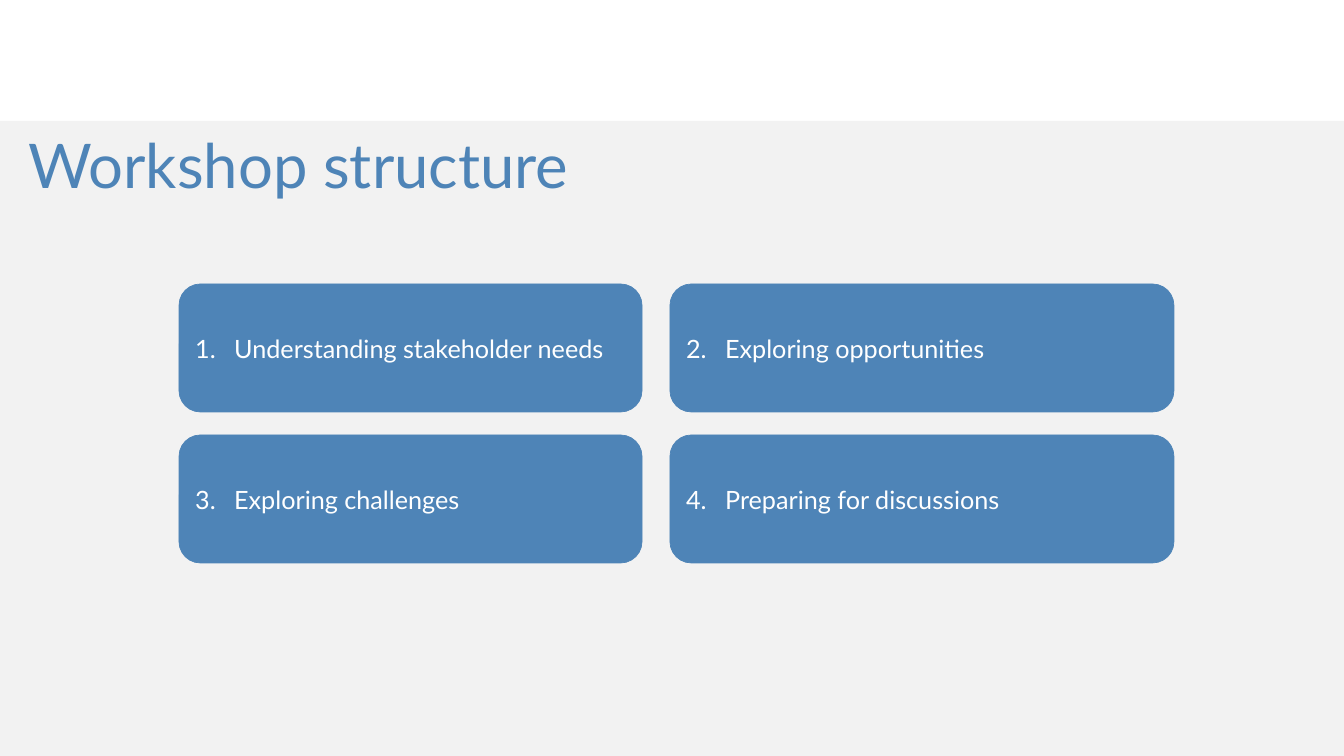
from lxml.etree import SubElement
from pptx import Presentation
from pptx.dml.color import RGBColor
from pptx.enum.shapes import MSO_SHAPE
from pptx.enum.text import MSO_ANCHOR, MSO_AUTO_SIZE, PP_ALIGN
from pptx.oxml.ns import qn
from pptx.util import Emu, Pt

BLUE = RGBColor(0x4E, 0x84, 0xB7)
GREY = RGBColor(0xF2, 0xF2, 0xF2)
WHITE = RGBColor(0xFF, 0xFF, 0xFF)

SLIDE_WIDTH, SLIDE_HEIGHT = 1344, 756
EMU_PER_PX = 12192000 / SLIDE_WIDTH

PANEL_TOP = 121
CARD_COLUMNS = [(179, 463), (670, 504)]  # left, width
CARD_TOP, CARD_HEIGHT, CARD_PITCH = 284, 128, 151
NUMBER_INDENT = 39

TITLE_FONT = {"name": "Lato", "size": Pt(44), "bold": False}
CARD_FONT = {"name": "Lato", "size": Pt(18), "bold": False}
STEPS = [
    "Understanding stakeholder needs",
    "Exploring opportunities",
    "Exploring challenges",
    "Preparing for discussions",
]


def px(length):
    return Emu(round(length * EMU_PER_PX))


def set_attributes(target, values):
    for name, value in values.items():
        setattr(target, name, value)


def format_font(paragraph, values, color):
    set_attributes(paragraph.font, values)
    paragraph.font.color.rgb = color


def number_paragraph(paragraph, number):
    """Give the paragraph an automatic number with a hanging indent."""
    properties = paragraph._p.get_or_add_pPr()
    properties.set("marL", str(px(NUMBER_INDENT)))
    properties.set("indent", str(-px(NUMBER_INDENT)))
    SubElement(properties, qn("a:buFont"), typeface="+mj-lt")
    SubElement(properties, qn("a:buAutoNum"), type="arabicPeriod", startAt=str(number))


def add_filled_shape(slide, kind, left, top, width, height, color):
    shape = slide.shapes.add_shape(kind, px(left), px(top), px(width), px(height))
    shape.shadow.inherit = False
    shape.fill.solid()
    shape.fill.fore_color.rgb = color
    return shape


def add_panel(slide):
    """Add the grey content area behind everything else."""
    panel = add_filled_shape(slide, MSO_SHAPE.RECTANGLE, 0, PANEL_TOP,
                             SLIDE_WIDTH, SLIDE_HEIGHT - PANEL_TOP, GREY)
    panel.line.fill.background()
    slide.shapes._spTree.insert(2, panel._element)


def set_title(slide, text):
    title = slide.shapes.title
    set_attributes(title, {"left": px(18), "top": px(122),
                           "width": px(1326), "height": px(85)})
    frame = title.text_frame
    frame.text = text
    set_attributes(frame, {"word_wrap": True, "auto_size": MSO_AUTO_SIZE.NONE,
                           "vertical_anchor": MSO_ANCHOR.TOP})
    paragraph = frame.paragraphs[0]
    paragraph.alignment = PP_ALIGN.LEFT
    format_font(paragraph, TITLE_FONT, BLUE)


def add_step_card(slide, index, text):
    row, column = divmod(index, len(CARD_COLUMNS))
    left, width = CARD_COLUMNS[column]
    card = add_filled_shape(slide, MSO_SHAPE.ROUNDED_RECTANGLE, left,
                            CARD_TOP + row * CARD_PITCH, width, CARD_HEIGHT, BLUE)
    card.line.color.rgb = BLUE
    card.line.width = Pt(0.5)
    frame = card.text_frame
    frame.text = text
    set_attributes(frame, {"word_wrap": True, "vertical_anchor": MSO_ANCHOR.MIDDLE})
    paragraph = frame.paragraphs[0]
    paragraph.alignment = PP_ALIGN.LEFT
    number_paragraph(paragraph, index + 1)
    format_font(paragraph, CARD_FONT, WHITE)


def main():
    presentation = Presentation()
    presentation.slide_width = px(SLIDE_WIDTH)
    presentation.slide_height = px(SLIDE_HEIGHT)
    slide = presentation.slides.add_slide(presentation.slide_layouts.get_by_name("Title Only"))
    add_panel(slide)
    set_title(slide, "Workshop structure")
    for index, text in enumerate(STEPS):
        add_step_card(slide, index, text)
    presentation.save("out.pptx")


if __name__ == "__main__":
    main()
